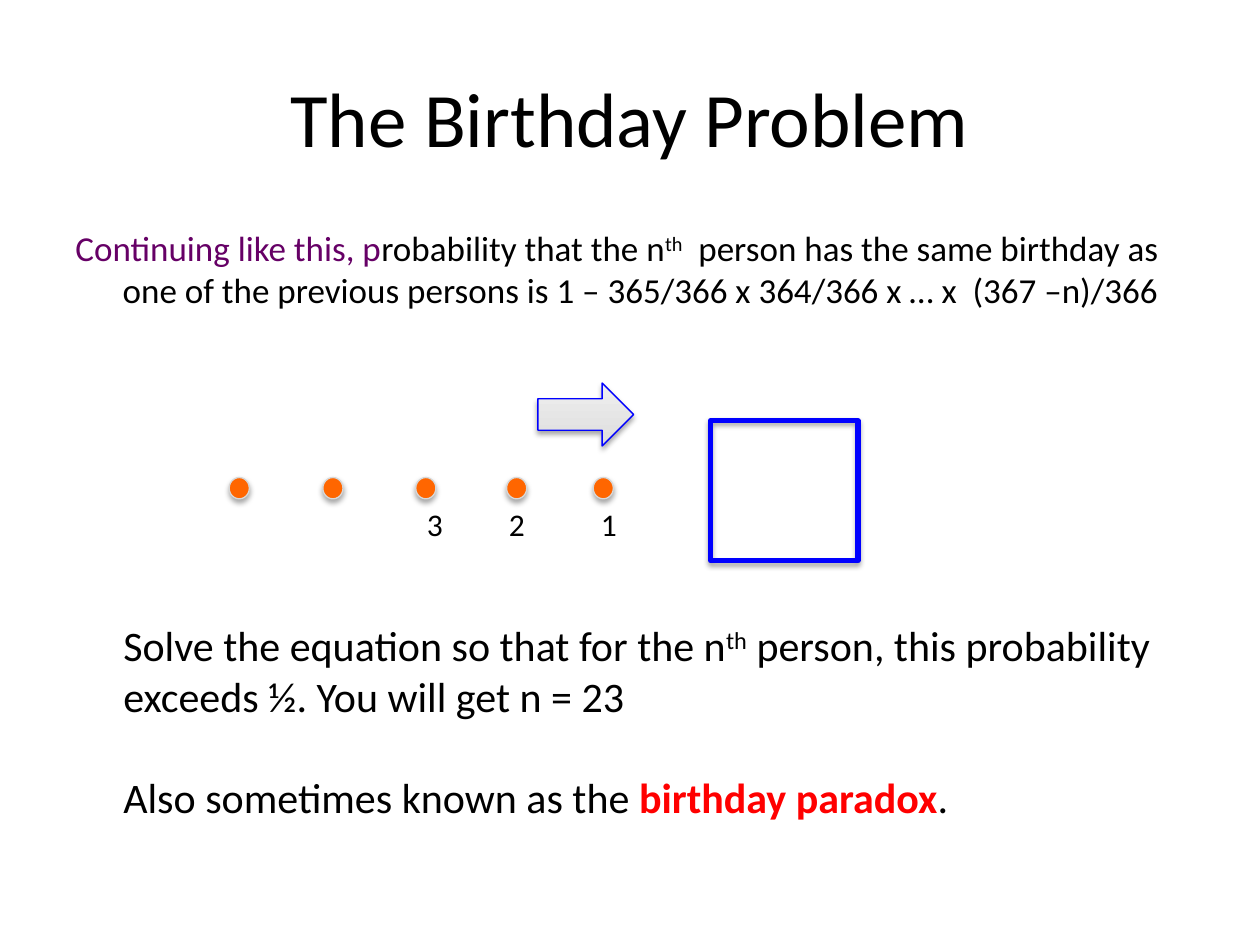
from lxml import etree
from pptx import Presentation
from pptx.dml.color import RGBColor
from pptx.enum import shapes, text
from pptx.oxml import ns
from pptx.util import Pt

BLACK = RGBColor(0x00, 0x00, 0x00)
PURPLE = RGBColor(0x66, 0x00, 0x66)
RED = RGBColor(0xFF, 0x00, 0x00)
BLUE = RGBColor(0x00, 0x00, 0xFF)
ORANGE = RGBColor(0xFF, 0x66, 0x00)
PALE_GRAY = RGBColor(0xD8, 0xD8, 0xD8)
ARROW_DARK = RGBColor(0xDD, 0xDD, 0xDD)
ARROW_LIGHT = RGBColor(0xEF, 0xEF, 0xEF)

deck = Presentation()
deck.slide_width, deck.slide_height = Pt(720), Pt(540)
page = deck.slides.add_slide(deck.slide_layouts[6])


def add_text(left, top, width, height, paragraphs, size, wrap=True):
    """Add a text box; each paragraph is a list of (words, colour, style) runs."""
    box = page.shapes.add_textbox(Pt(left), Pt(top), Pt(width), Pt(height))
    frame = box.text_frame
    frame.word_wrap = wrap
    for index, runs in enumerate(paragraphs):
        para = frame.paragraphs[0] if index == 0 else frame.add_paragraph()
        for words, colour, style in runs:
            span = para.add_run()
            span.text = words
            span.font.name = "Calibri"
            span.font.size = Pt(size)
            span.font.color.rgb = colour
            if style == "bold":
                span.font.bold = True
            elif style == "super":
                span._r.get_or_add_rPr().set("baseline", "30000")
    return frame


def add_shadowed(kind, left, top, width, height, line_colour, line_width):
    """Add an outlined shape with a soft shadow straight below it."""
    shape = page.shapes.add_shape(kind, Pt(left), Pt(top), Pt(width), Pt(height))
    shape.line.color.rgb = line_colour
    shape.line.width = Pt(line_width)
    shape.shadow.inherit = False
    effects = shape._element.spPr.find(ns.qn("a:effectLst"))
    shadow = etree.SubElement(effects, ns.qn("a:outerShdw"), blurRad=str(Pt(3.1)),
                              dist=str(Pt(1.8)), dir="5400000", rotWithShape="0")
    colour = etree.SubElement(shadow, ns.qn("a:srgbClr"), val="000000")
    etree.SubElement(colour, ns.qn("a:alpha"), val="35000")
    return shape


title = add_text(36, 21.6, 648, 90, [[("The Birthday Problem", BLACK, None)]], 44)
title.vertical_anchor = text.MSO_ANCHOR.MIDDLE
title.paragraphs[0].alignment = text.PP_ALIGN.CENTER

probability = add_text(36, 126, 648, 80, [[
    ("Continuing like this, p", PURPLE, None),
    ("robability that the n", BLACK, None),
    ("th", BLACK, "super"),
    ("  person has the same birthday as one of the previous persons is "
     "1 – 365/366 x 364/366 x … x  (367 –n)/366", BLACK, None),
]], 20)
hanging = probability.paragraphs[0]
hanging.space_before = Pt(4)
indents = hanging._p.get_or_add_pPr()
indents.set("marL", str(Pt(27)))
indents.set("indent", str(Pt(-27)))

# People queueing for the room
for left in (131, 184.5, 237.6, 289.5, 339):
    person = add_shadowed(shapes.MSO_SHAPE.OVAL, left, 272.9, 11.5, 12.2, PALE_GRAY, 0.75)
    person.fill.solid()
    person.fill.fore_color.rgb = ORANGE

for number, left in (("3", 236.9), ("2", 283.7), ("1", 336.3)):
    add_text(left, 285.1, 23.8, 28.8, [[(number, BLACK, None)]], 18, wrap=False)

room = add_shadowed(shapes.MSO_SHAPE.RECTANGLE, 406.1, 240.5, 84.2, 79.9, BLUE, 3)
room.fill.background()

arrow = add_shadowed(shapes.MSO_SHAPE.RIGHT_ARROW, 307.4, 218.9, 54.7, 36, BLUE, 0.75)
arrow.fill.gradient()
arrow.fill.gradient_angle = 90
for stop, colour in zip(arrow.fill.gradient_stops, (ARROW_DARK, ARROW_LIGHT)):
    stop.color.rgb = colour

conclusion = add_text(63.4, 350.6, 609, 123.8, [
    [("Solve the equation so that for the n", BLACK, None),
     ("th", BLACK, "super"),
     (" person, this probability", BLACK, None)],
    [("exceeds ½. You will get n = 23", BLACK, None)],
    [("Also sometimes known as the ", BLACK, None),
     ("birthday paradox", RED, "bold"),
     (".", BLACK, None)],
], 24, wrap=False)
conclusion.paragraphs[2].space_before = Pt(29)

deck.save("out.pptx")
